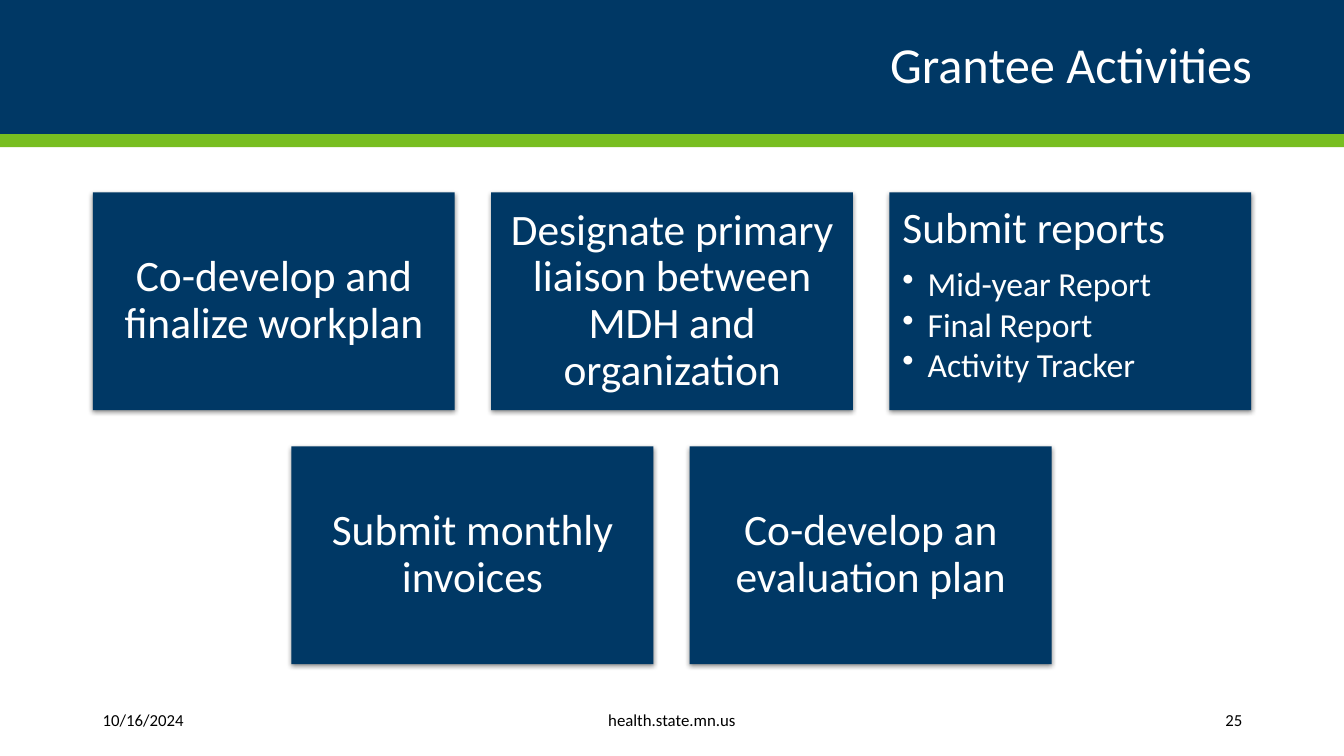
from dataclasses import dataclass

from lxml import etree
from pptx import Presentation
from pptx import util as u
from pptx.dml.color import RGBColor
from pptx.enum import shapes, text
from pptx.oxml.ns import qn

EMU_PER_PX = 9144  # 100 px to the inch
FONT = "Calibri"
NAVY, GREEN, WHITE, BLACK = "003865", "78BE21", "FFFFFF", "000000"
LEFT, CENTER, RIGHT = text.PP_ALIGN.LEFT, text.PP_ALIGN.CENTER, text.PP_ALIGN.RIGHT

SLIDE_W, SLIDE_H = 1333, 750
BANNER_H, STRIPE_H = 133, 13
MARGIN = 92
CARD_W, CARD_H, CARD_GAP, CARD_INSET = 359, 216, 36, 13
CARDS_TOP = 191
BULLET_INDENT = 25


@dataclass
class Label:
    words: str
    left: int
    top: int
    width: int
    height: int
    size: int
    color: str
    align: text.PP_ALIGN
    inset: int = 10


@dataclass
class Activity:
    heading: str
    bullets: tuple[str, ...] = ()


LABELS = [
    Label("Grantee Activities", MARGIN, 0, 1150, BANNER_H, 36, WHITE, RIGHT, 0),
    Label("10/16/2024", MARGIN, 695, 149, 40, 12, BLACK, LEFT),
    Label("health.state.mn.us", 361, 695, 611, 40, 12, BLACK, CENTER),
    Label("25", 1082, 695, 160, 40, 12, BLACK, RIGHT),
]

ACTIVITY_ROWS = [
    [
        Activity("Co-develop and finalize workplan"),
        Activity("Designate primary liaison between MDH and organization"),
        Activity("Submit reports", ("Mid-year Report", "Final Report", "Activity Tracker")),
    ],
    [
        Activity("Submit monthly invoices"),
        Activity("Co-develop an evaluation plan"),
    ],
]


def px(length: int) -> u.Emu:
    return u.Emu(length * EMU_PER_PX)


def rgb(color: str) -> RGBColor:
    return RGBColor.from_string(color)


def style(paragraph, size: int, color: str, align: text.PP_ALIGN) -> None:
    paragraph.alignment = align
    paragraph.line_spacing = 0.9
    paragraph.font.name = FONT
    paragraph.font.size = u.Pt(size)
    paragraph.font.color.rgb = rgb(color)


def add_rect(slide, left: int, top: int, width: int, height: int, color: str):
    rect = slide.shapes.add_shape(
        shapes.MSO_SHAPE.RECTANGLE, px(left), px(top), px(width), px(height))
    rect.shadow.inherit = False
    rect.fill.solid()
    rect.fill.fore_color.rgb = rgb(color)
    rect.line.fill.background()
    return rect


def add_label(slide, label: Label) -> None:
    box = slide.shapes.add_textbox(
        px(label.left), px(label.top), px(label.width), px(label.height))
    frame = box.text_frame
    frame.word_wrap = True
    frame.vertical_anchor = text.MSO_ANCHOR.MIDDLE
    frame.margin_left = frame.margin_right = px(label.inset)
    frame.text = label.words
    style(frame.paragraphs[0], label.size, label.color, label.align)


def add_soft_shadow(card) -> None:
    effects = card._element.spPr.find(qn("a:effectLst"))
    shadow = etree.SubElement(
        effects, qn("a:outerShdw"), blurRad=str(u.Pt(3.5)), dist=str(u.Pt(1.1)),
        dir="5400000", algn="ctr", rotWithShape="0")
    tint = etree.SubElement(shadow, qn("a:srgbClr"), val=BLACK)
    etree.SubElement(tint, qn("a:alpha"), val="45000")


def add_bullet(frame, words: str) -> None:
    paragraph = frame.add_paragraph()
    paragraph.text = words
    paragraph.level = 1
    properties = paragraph._p.get_or_add_pPr()
    properties.set("marL", str(px(BULLET_INDENT)))
    properties.set("indent", str(-px(BULLET_INDENT)))
    etree.SubElement(properties, qn("a:buChar"), char="•")
    style(paragraph, 24, WHITE, LEFT)
    paragraph.space_after = u.Pt(3)


def add_card(slide, activity: Activity, left: int, top: int) -> None:
    card = add_rect(slide, left, top, CARD_W, CARD_H, NAVY)
    add_soft_shadow(card)
    frame = card.text_frame
    frame.word_wrap = True
    frame.margin_left = frame.margin_right = px(CARD_INSET)
    frame.margin_top = frame.margin_bottom = px(CARD_INSET)
    listed = bool(activity.bullets)
    frame.vertical_anchor = text.MSO_ANCHOR.TOP if listed else text.MSO_ANCHOR.MIDDLE
    frame.text = activity.heading
    heading = frame.paragraphs[0]
    style(heading, 31, WHITE, LEFT if listed else CENTER)
    if listed:
        heading.space_after = u.Pt(11)
    for words in activity.bullets:
        add_bullet(frame, words)


def main() -> None:
    deck = Presentation()
    deck.slide_width, deck.slide_height = px(SLIDE_W), px(SLIDE_H)
    slide = deck.slides.add_slide(deck.slide_layouts[6])

    # Banner and accent stripe
    add_rect(slide, 0, 0, SLIDE_W, BANNER_H, NAVY)
    add_rect(slide, 0, BANNER_H, SLIDE_W, STRIPE_H, GREEN)

    # Title and footer
    for label in LABELS:
        add_label(slide, label)

    # Activity cards, each row centred on the slide
    for row, activities in enumerate(ACTIVITY_ROWS):
        row_width = len(activities) * (CARD_W + CARD_GAP) - CARD_GAP
        row_left = (SLIDE_W - row_width) // 2
        for column, activity in enumerate(activities):
            add_card(slide, activity, row_left + column * (CARD_W + CARD_GAP),
                     CARDS_TOP + row * (CARD_H + CARD_GAP))

    deck.save("out.pptx")


if __name__ == "__main__":
    main()
